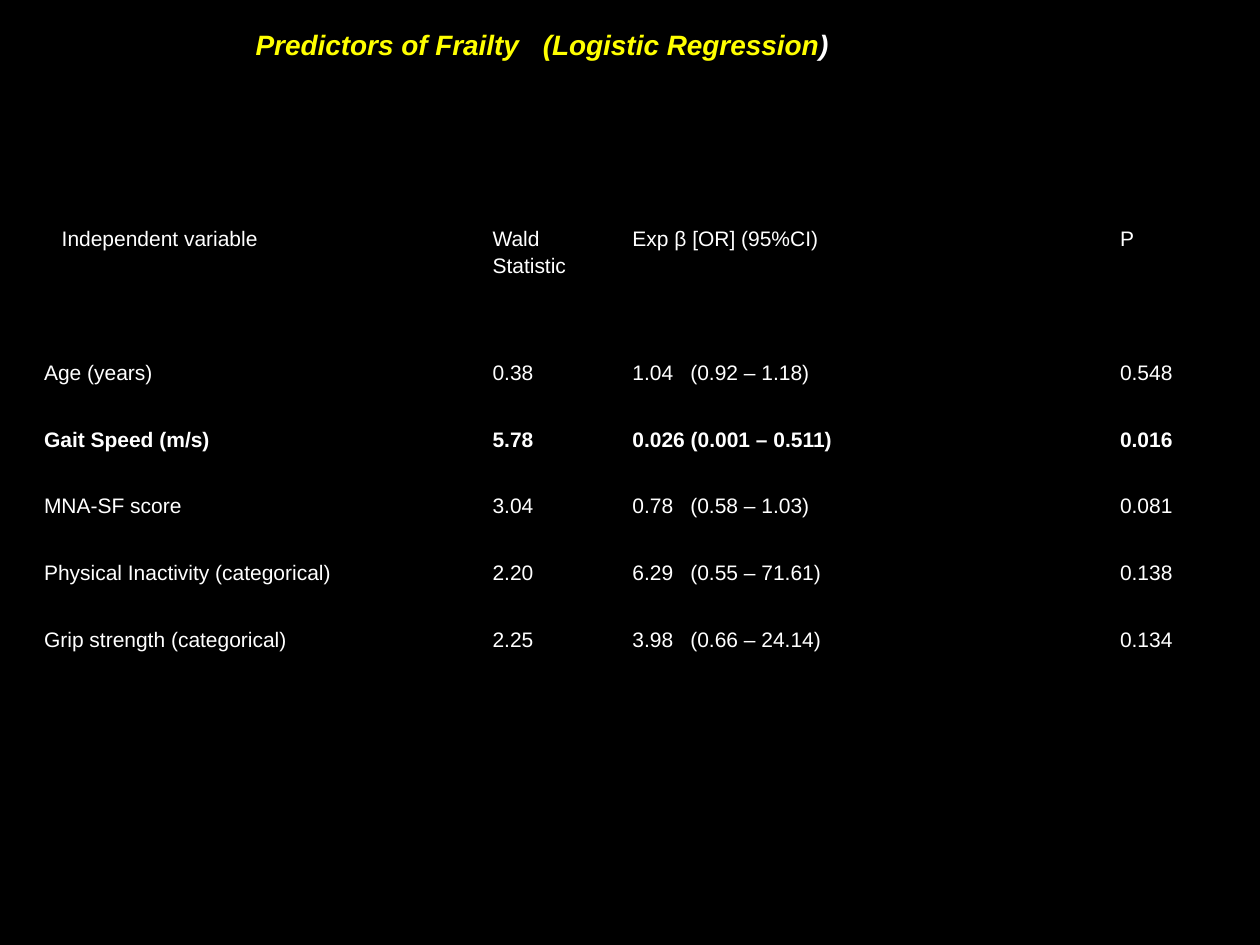
from lxml.etree import SubElement
from pptx import Presentation
from pptx.dml.color import RGBColor as RGB
from pptx.enum.text import MSO_AUTO_SIZE as AutoSize
from pptx.oxml.ns import qn
from pptx.util import Inches, Pt

COLORS = {"background": "000000", "text": "FFFFFF", "title": "FFFF00"}
COLUMN_WIDTHS = [3.56, 1.11, 3.87, 1]
HEADER_HEIGHT, ROW_HEIGHT = 1.06, 0.53
HEADER_INDENT = 0.14
INTERVAL_TAB, METHOD_TAB = 0.46, 2.28
SIGNIFICANT = "Gait Speed (m/s)"
PREDICTORS = [
    ("Independent variable", "Wald Statistic", "Exp β [OR] (95%CI)", "P"),
    ("Age (years)", "0.38", "1.04\t(0.92 – 1.18)", "0.548"),
    (SIGNIFICANT, "5.78", "0.026 (0.001 – 0.511)", "0.016"),
    ("MNA-SF score", "3.04", "0.78\t(0.58 – 1.03)", "0.081"),
    ("Physical Inactivity (categorical)", "2.20", "6.29\t(0.55 – 71.61)", "0.138"),
    ("Grip strength (categorical)", "2.25", "3.98\t(0.66 – 24.14)", "0.134"),
]


def write(paragraph, text, size=12, color="text", bold=False, italic=False):
    run = paragraph.add_run()
    run.text = text
    font = run.font
    font.name, font.size = "Arial", Pt(size)
    font.bold, font.italic = bold, italic
    font.color.rgb = RGB.from_string(COLORS[color])


def add_tab_stop(paragraph, position):
    stops = SubElement(paragraph._p.get_or_add_pPr(), qn("a:tabLst"))
    SubElement(stops, qn("a:tab"), pos=str(Inches(position)), algn="l")


def add_borders(cell, color):
    """Draw a 1 pt line on all four sides; call before filling the cell."""
    properties = cell._tc.get_or_add_tcPr()
    for side in ("a:lnL", "a:lnR", "a:lnT", "a:lnB"):
        line = SubElement(properties, qn(side), w=str(Pt(1)))
        fill = SubElement(line, qn("a:solidFill"))
        SubElement(fill, qn("a:srgbClr"), val=COLORS[color])


class SlideBuilder:
    def __init__(self, slide):
        self.slide = slide
        self.background = RGB.from_string(COLORS["background"])
        fill = slide.background.fill
        fill.solid()
        fill.fore_color.rgb = self.background

    def title(self, parts, left, top, width, height):
        """Write (text, color) parts on one line, with a tab before the method."""
        box = self.slide.shapes.add_textbox(
            Inches(left), Inches(top), Inches(width), Inches(height))
        frame = box.text_frame
        frame.word_wrap = True
        frame.auto_size = AutoSize.SHAPE_TO_FIT_TEXT
        paragraph = frame.paragraphs[0]
        add_tab_stop(paragraph, METHOD_TAB)
        for text, color in parts:
            write(paragraph, text, size=16, color=color, bold=True, italic=True)

    def cell(self, cell, text, bold):
        add_borders(cell, "background")
        cell.fill.solid()
        cell.fill.fore_color.rgb = self.background
        cell.margin_left = cell.margin_right = Inches(0.07)
        cell.margin_top = cell.margin_bottom = 0
        paragraph = cell.text_frame.paragraphs[0]
        paragraph.line_spacing = 1.15
        if "\t" in text:
            add_tab_stop(paragraph, INTERVAL_TAB)
        write(paragraph, text, bold=bold)

    def table(self, rows, left, top):
        heights = [HEADER_HEIGHT] + [ROW_HEIGHT] * (len(rows) - 1)
        table = self.slide.shapes.add_table(
            len(rows), len(COLUMN_WIDTHS), Inches(left), Inches(top),
            Inches(sum(COLUMN_WIDTHS)), Inches(sum(heights))).table
        for column, width in zip(table.columns, COLUMN_WIDTHS):
            column.width = Inches(width)
        for row, height, texts in zip(table.rows, heights, rows):
            row.height = Inches(height)
            for cell, text in zip(row.cells, texts):
                self.cell(cell, text, bold=texts[0] == SIGNIFICANT)
        table.cell(0, 0).margin_left += Inches(HEADER_INDENT)


def main():
    presentation = Presentation()
    presentation.slide_width, presentation.slide_height = Inches(10), Inches(7.5)
    builder = SlideBuilder(
        presentation.slides.add_slide(presentation.slide_layouts[6]))
    builder.table(PREDICTORS, 0.28, 1.78)
    builder.title([("Predictors of Frailty\t(Logistic Regression", "title"),
                   (")", "text")], 1.93, 0.17, 6.38, 0.37)
    presentation.save("out.pptx")


if __name__ == "__main__":
    main()
